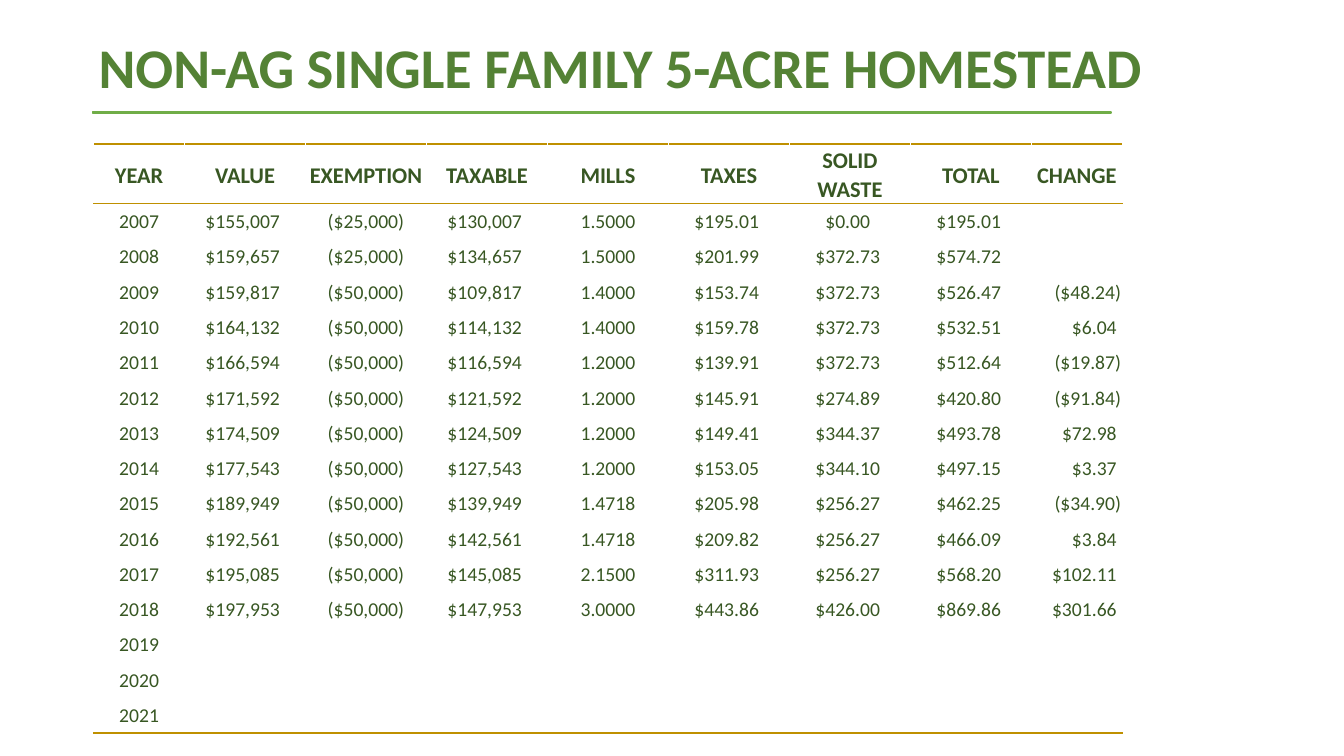
from dataclasses import dataclass

from lxml.etree import SubElement as Sub
from pptx import Presentation
from pptx.dml.color import RGBColor as Rgb
from pptx.enum.shapes import MSO_SHAPE as Form
from pptx.enum.text import MSO_ANCHOR as Anchor, PP_ALIGN as Align
from pptx.oxml.ns import qn
from pptx.util import Inches, Pt


@dataclass(frozen=True)
class Theme:
    """Colours, font and type sizes of the slide."""
    title: str = "548235"
    rule: str = "70AD47"
    ink: str = "385723"
    gold: str = "BF9000"
    white: str = "FFFFFF"
    font: str = "Calibri"
    big: int = 40
    head: int = 16
    body: int = 14


HEADS = ["YEAR", "VALUE", "EXEMPTION", "TAXABLE", "MILLS", "TAXES",
         "SOLID WASTE", "TOTAL", "CHANGE"]
TAXES = [
    "2007 $155,007 ($25,000) $130,007 1.5000 $195.01 $0.00 $195.01",
    "2008 $159,657 ($25,000) $134,657 1.5000 $201.99 $372.73 $574.72",
    "2009 $159,817 ($50,000) $109,817 1.4000 $153.74 $372.73 $526.47 ($48.24)",
    "2010 $164,132 ($50,000) $114,132 1.4000 $159.78 $372.73 $532.51 $6.04",
    "2011 $166,594 ($50,000) $116,594 1.2000 $139.91 $372.73 $512.64 ($19.87)",
    "2012 $171,592 ($50,000) $121,592 1.2000 $145.91 $274.89 $420.80 ($91.84)",
    "2013 $174,509 ($50,000) $124,509 1.2000 $149.41 $344.37 $493.78 $72.98",
    "2014 $177,543 ($50,000) $127,543 1.2000 $153.05 $344.10 $497.15 $3.37",
    "2015 $189,949 ($50,000) $139,949 1.4718 $205.98 $256.27 $462.25 ($34.90)",
    "2016 $192,561 ($50,000) $142,561 1.4718 $209.82 $256.27 $466.09 $3.84",
    "2017 $195,085 ($50,000) $145,085 2.1500 $311.93 $256.27 $568.20 $102.11",
    "2018 $197,953 ($50,000) $147,953 3.0000 $443.86 $426.00 $869.86 $301.66",
    "2019",
    "2020",
    "2021",
]
WIDTHS = [0.9] + [1.2] * 7 + [0.9]


def write(frame, text, *, font, size, color, bold=False, align=Align.LEFT, space=1.0):
    """Put one formatted paragraph into a text frame."""
    par = frame.paragraphs[0]
    par.alignment = align
    par.line_spacing = space
    run = par.add_run()
    run.text = text
    run.font.name = font
    run.font.size = Pt(size)
    run.font.bold = bold
    run.font.color.rgb = Rgb.from_string(color)


class Board:
    """Hold the theme and the slide being drawn."""

    def __init__(self, deck, theme):
        """Add a blank slide to the deck."""
        self.theme = theme
        self.slide = deck.slides.add_slide(deck.slide_layouts[6])

    def title(self, text, left, top, width, height):
        """Add the heading."""
        box = self.slide.shapes.add_textbox(*map(Inches, (left, top, width, height)))
        box.text_frame.word_wrap = True
        box.text_frame.vertical_anchor = Anchor.TOP
        write(box.text_frame, text, font=self.theme.font, size=self.theme.big,
              color=self.theme.title, bold=True, space=0.9)

    def rule(self, left, top, width, height):
        """Add the thin bar under the heading."""
        bar = self.slide.shapes.add_shape(
            Form.RECTANGLE, *map(Inches, (left, top, width, height)))
        bar.shadow.inherit = False
        color = Rgb.from_string(self.theme.rule)
        bar.fill.solid()
        bar.fill.fore_color.rgb = color
        bar.line.color.rgb = color
        bar.line.width = Pt(1)

    def edge(self, cell, side, color, width):
        """Draw one border of a cell."""
        line = Sub(cell._tc.get_or_add_tcPr(), qn(f"a:ln{side}"), w=str(Pt(width)))
        Sub(Sub(line, qn("a:solidFill")), qn("a:srgbClr"), val=color)

    def cell(self, cell, text, row, col, last):
        """Style and fill one cell."""
        theme = self.theme
        cell.margin_left = cell.margin_right = cell.margin_top = Inches(0.01)
        cell.margin_bottom = 0
        cell.vertical_anchor = Anchor.MIDDLE
        plain = (theme.white, 1)
        over = {0: (theme.gold, 1.5), 1: (theme.gold, 1)}.get(row, plain)
        under = {0: (theme.gold, 1), last: (theme.gold, 1.5)}.get(row, plain)
        for side, look in zip("LRTB", (plain, plain, over, under)):
            self.edge(cell, side, *look)
        cell.fill.background()
        if text:
            head = row == 0
            right = not head and col == len(HEADS) - 1
            write(cell.text_frame, text + " " * text.startswith("$"),
                  font=theme.font, size=theme.head if head else theme.body,
                  color=theme.ink, bold=head, space=1.07 if head else 1.0,
                  align=Align.RIGHT if right else Align.CENTER)

    def table(self, rows, left, top, head, step):
        """Add the table of yearly taxes."""
        last = len(rows) - 1
        size = (left, top, sum(WIDTHS), head + step * last)
        grid = self.slide.shapes.add_table(
            len(rows), len(WIDTHS), *map(Inches, size)).table
        grid.horz_banding = False
        grid.first_row = False
        for col, width in zip(grid.columns, WIDTHS):
            col.width = Inches(width)
        for i, row in enumerate(rows):
            grid.rows[i].height = Inches(step if i else head)
            for j in range(len(WIDTHS)):
                self.cell(grid.cell(i, j), row[j] if j < len(row) else "", i, j, last)


def main():
    """Build and save the slide."""
    deck = Presentation()
    deck.slide_width, deck.slide_height = Inches(13.33), Inches(7.5)
    board = Board(deck, Theme())
    rows = [HEADS] + [line.split() for line in TAXES]
    board.table(rows, 0.93, 1.43, head=0.58, step=0.35)
    board.title("NON-AG SINGLE FAMILY 5-ACRE HOMESTEAD", 0.88, 0.35, 11.5, 1.45)
    board.rule(0.92, 1.11, 10.1, 0.01)
    deck.save("out.pptx")


if __name__ == "__main__":
    main()
